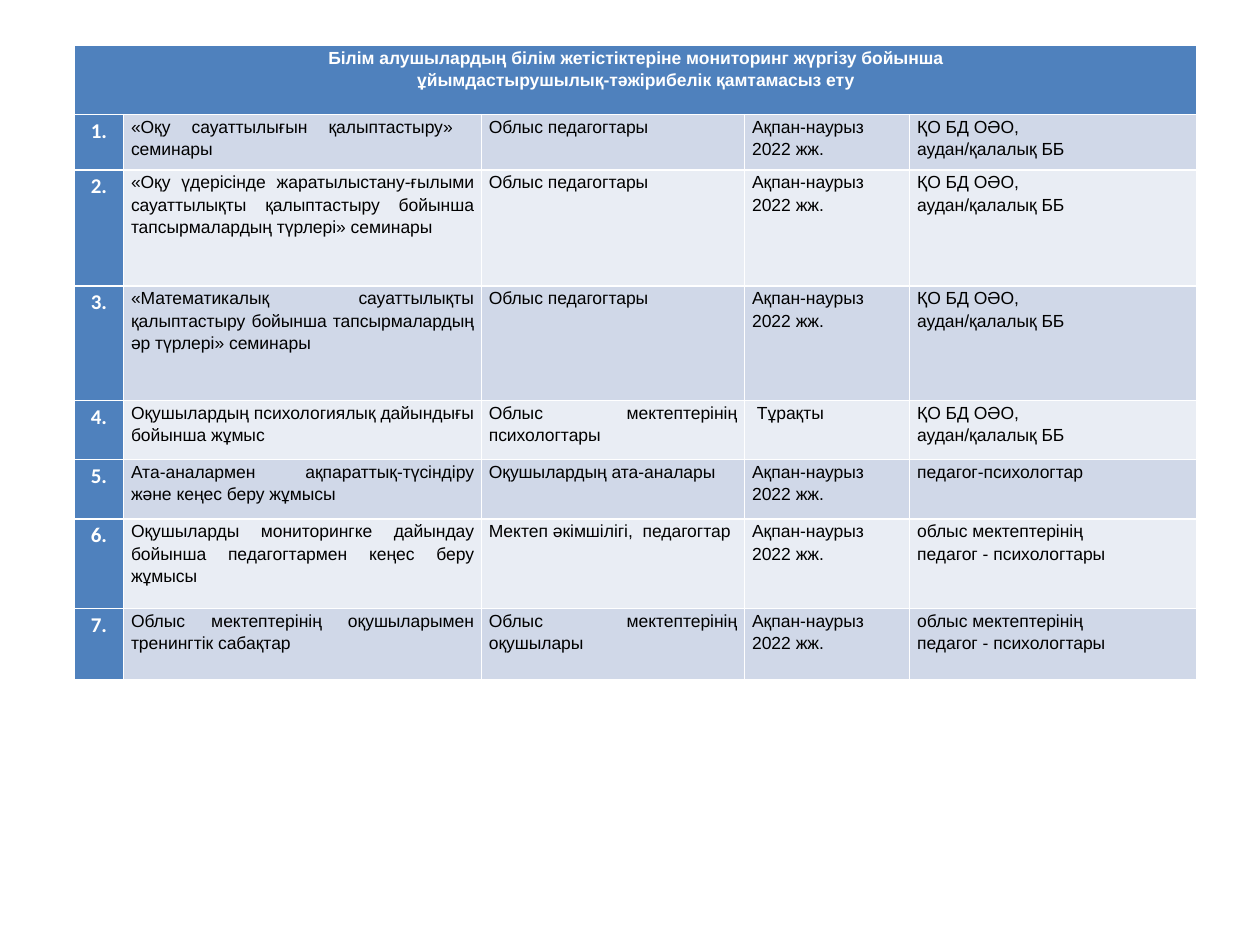
"""Build a one-slide table of the monitoring support plan."""
from dataclasses import dataclass

from pptx import Presentation
from pptx.dml.color import RGBColor
from pptx.enum.text import PP_ALIGN
from pptx.util import Inches, Pt


@dataclass(frozen=True)
class Theme:
    accent: str = "4F81BD"
    bands: tuple = ("D0D8E8", "E9EDF4")
    light: str = "FFFFFF"
    dark: str = "000000"
    body_font: str = "Arial"
    number_font: str = "Calibri"
    body_size: int = 10
    number_size: int = 12
    line_spacing: float = 1.15
    inset: float = 0.06


THEME = Theme()
COLUMN_WIDTHS = (0.39, 2.84, 2.09, 1.31, 2.28)
ROW_HEIGHTS = (0.55, 0.44, 0.92, 0.91, 0.47, 0.47, 0.71, 0.57)
HEADING = (
    "Білім алушылардың білім жетістіктеріне мониторинг жүргізу бойынша\n"
    "ұйымдастырушылық-тәжірибелік қамтамасыз ету"
)
TEACHERS = "Облыс педагогтары"
PERIOD = "Ақпан-наурыз 2022 жж."
DEPARTMENTS = "ҚО БД ОӘО,\nаудан/қалалық ББ"
PSYCHOLOGISTS = "облыс мектептерінің\nпедагог - психологтары"
ACTIVITIES = (
    ("«Оқу сауаттылығын қалыптастыру»  семинары", TEACHERS, PERIOD, DEPARTMENTS),
    ("«Оқу үдерісінде жаратылыстану-ғылыми сауаттылықты қалыптастыру бойынша "
     "тапсырмалардың түрлері» семинары", TEACHERS, PERIOD, DEPARTMENTS),
    ("«Математикалық сауаттылықты қалыптастыру бойынша тапсырмалардың "
     "әр түрлері» семинары", TEACHERS, PERIOD, DEPARTMENTS),
    ("Оқушылардың психологиялық дайындығы бойынша жұмыс",
     "Облыс мектептерінің психологтары", " Тұрақты", DEPARTMENTS),
    ("Ата-аналармен ақпараттық-түсіндіру және кеңес беру жұмысы",
     "Оқушылардың ата-аналары", PERIOD, "педагог-психологтар"),
    ("Оқушыларды мониторингке дайындау бойынша педагогтармен кеңес беру жұмысы",
     "Мектеп әкімшілігі,  педагогтар", PERIOD, PSYCHOLOGISTS),
    ("Облыс мектептерінің оқушыларымен тренингтік сабақтар",
     "Облыс мектептерінің оқушылары", PERIOD, PSYCHOLOGISTS),
)


def write_cell(cell, text, fill, emphasized=False, numbered=False):
    cell.fill.solid()
    cell.fill.fore_color.rgb = RGBColor.from_string(fill)
    cell.margin_left = cell.margin_right = Inches(THEME.inset)
    cell.margin_top = cell.margin_bottom = 0
    cell.text_frame.text = text
    for paragraph in cell.text_frame.paragraphs:
        paragraph.alignment = PP_ALIGN.CENTER if emphasized else PP_ALIGN.JUSTIFY
        paragraph.line_spacing = THEME.line_spacing
        for run in paragraph.runs:
            run.font.name = THEME.number_font if numbered else THEME.body_font
            run.font.size = Pt(THEME.number_size if numbered else THEME.body_size)
            run.font.bold = emphasized
            color = THEME.light if emphasized else THEME.dark
            run.font.color.rgb = RGBColor.from_string(color)


presentation = Presentation()
presentation.slide_width, presentation.slide_height = Inches(10), Inches(7.5)
slide = presentation.slides.add_slide(presentation.slide_layouts[6])

table = slide.shapes.add_table(
    len(ROW_HEIGHTS), len(COLUMN_WIDTHS), Inches(0.59), Inches(0.36),
    Inches(sum(COLUMN_WIDTHS)), Inches(sum(ROW_HEIGHTS)),
).table
table.first_col = True
for column, width in zip(table.columns, COLUMN_WIDTHS):
    column.width = Inches(width)
for row, height in zip(table.rows, ROW_HEIGHTS):
    row.height = Inches(height)

table.cell(0, 0).merge(table.cell(0, len(COLUMN_WIDTHS) - 1))
write_cell(table.cell(0, 0), HEADING, THEME.accent, emphasized=True)

for number, activity in enumerate(ACTIVITIES, start=1):
    write_cell(table.cell(number, 0), f"{number}.", THEME.accent, True, True)
    band = THEME.bands[(number - 1) % 2]
    for column_index, text in enumerate(activity, start=1):
        write_cell(table.cell(number, column_index), text, band)

presentation.save("out.pptx")
